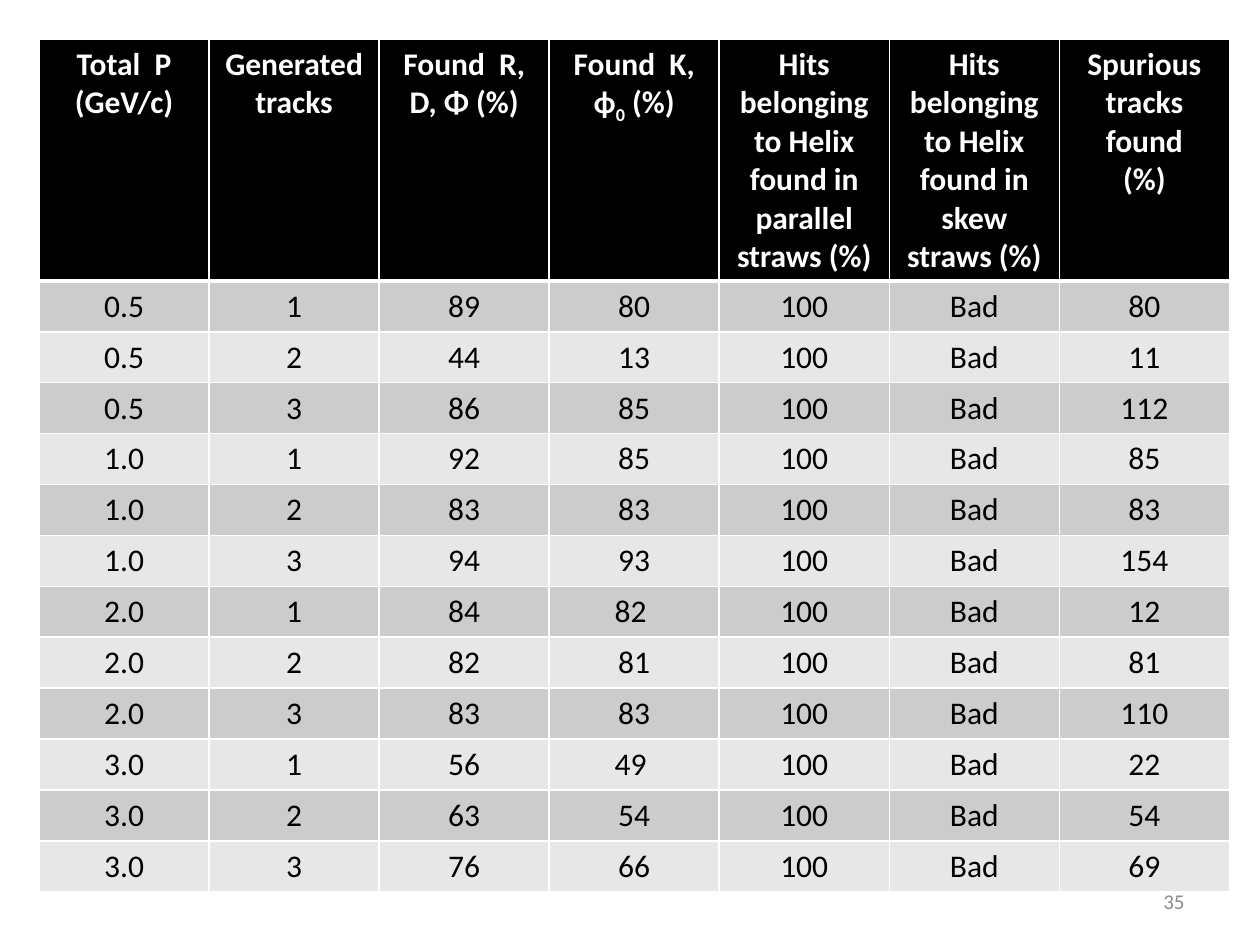
"""Build a slide with a table of track-finding results by total momentum."""
from lxml import etree
from pptx import Presentation
from pptx.dml.color import RGBColor
from pptx.enum.text import MSO_ANCHOR, PP_ALIGN
from pptx.oxml.ns import qn
from pptx.util import Inches, Pt

CENTER, RIGHT = PP_ALIGN.CENTER, PP_ALIGN.RIGHT
MIDDLE = MSO_ANCHOR.MIDDLE
FONT = "Calibri"
COLORS = {
    "header": "000000",
    "header_text": "FFFFFF",
    "odd_row": "CCCCCC",
    "even_row": "E7E7E7",
    "body_text": "000000",
    "border": "FFFFFF",
    "page_number": "8C8C8C",
}
SUBSCRIPT = "-25000"

HEADINGS = [
    [["Total  P"], ["(GeV/c)"]],
    [["Generated"], ["tracks"]],
    [["Found  R, D, Φ (%)"]],
    [["Found  K, ϕ", "0", " (%)"]],
    [["Hits belonging to Helix found in parallel straws (%)"]],
    [["Hits belonging to Helix found in skew straws (%)"]],
    [["Spurious tracks found"], ["(%)"]],
]
RESULTS = [
    ("0.5", "1", "89", "80", "80"),
    ("0.5", "2", "44", "13", "11"),
    ("0.5", "3", "86", "85", "112"),
    ("1.0", "1", "92", "85", "85"),
    ("1.0", "2", "83", "83", "83"),
    ("1.0", "3", "94", "93", "154"),
    ("2.0", "1", "84", "82 ", "12"),
    ("2.0", "2", "82", "81", "81"),
    ("2.0", "3", "83", "83", "110"),
    ("3.0", "1", "56", "49 ", "22"),
    ("3.0", "2", "63", "54", "54"),
    ("3.0", "3", "76", "66", "69"),
]
TABLE_WIDTH, TABLE_HEIGHT, HEADER_HEIGHT = 9.45, 6.77, 1.92


def write_paragraphs(frame, paragraphs, size, color, bold=False, align=CENTER):
    for index, texts in enumerate(paragraphs):
        paragraph = frame.add_paragraph() if index else frame.paragraphs[0]
        paragraph.alignment = align
        for position, text in enumerate(texts):
            run = paragraph.add_run()
            run.text = text
            run.font.name = FONT
            run.font.size = Pt(size)
            run.font.bold = bold
            run.font.color.rgb = RGBColor.from_string(color)
            if position == 1:
                run._r.get_or_add_rPr().set("baseline", SUBSCRIPT)


def set_borders(cell, bottom_width, top_width):
    properties = cell._tc.get_or_add_tcPr()
    for side, width in (("L", 1), ("R", 1), ("T", top_width), ("B", bottom_width)):
        line = etree.SubElement(properties, qn(f"a:ln{side}"), w=str(Pt(width)))
        fill = etree.SubElement(line, qn("a:solidFill"))
        etree.SubElement(fill, qn("a:srgbClr"), val=COLORS["border"])


presentation = Presentation()
presentation.slide_width = Inches(10)
presentation.slide_height = Inches(7.5)
slide = presentation.slides.add_slide(presentation.slide_layouts[6])

page_number = slide.shapes.add_textbox(Inches(7.17), Inches(6.95), Inches(2.33), Inches(0.4))
page_number.text_frame.word_wrap = True
page_number.text_frame.vertical_anchor = MIDDLE
write_paragraphs(page_number.text_frame, [["35"]], 12, COLORS["page_number"], align=RIGHT)

rows = [HEADINGS]
for momentum, tracks, found_circle, found_helix, spurious in RESULTS:
    values = (momentum, tracks, found_circle, found_helix, "100", "Bad", spurious)
    rows.append([[[value]] for value in values])

table = slide.shapes.add_table(
    len(rows), len(HEADINGS),
    Inches(0.31), Inches(0.31), Inches(TABLE_WIDTH), Inches(TABLE_HEIGHT),
).table
for column in table.columns:
    column.width = Inches(TABLE_WIDTH / len(HEADINGS))

for row_index, row in enumerate(rows):
    is_header = row_index == 0
    body_height = (TABLE_HEIGHT - HEADER_HEIGHT) / len(RESULTS)
    table.rows[row_index].height = Inches(HEADER_HEIGHT if is_header else body_height)
    band = "header" if is_header else "odd_row" if row_index % 2 else "even_row"
    text_color = COLORS["header_text" if is_header else "body_text"]
    for column_index, paragraphs in enumerate(row):
        cell = table.cell(row_index, column_index)
        set_borders(cell, 3 if is_header else 1, 3 if row_index == 1 else 1)
        cell.fill.solid()
        cell.fill.fore_color.rgb = RGBColor.from_string(COLORS[band])
        write_paragraphs(cell.text_frame, paragraphs, 18, text_color, bold=is_header)

presentation.save("out.pptx")
